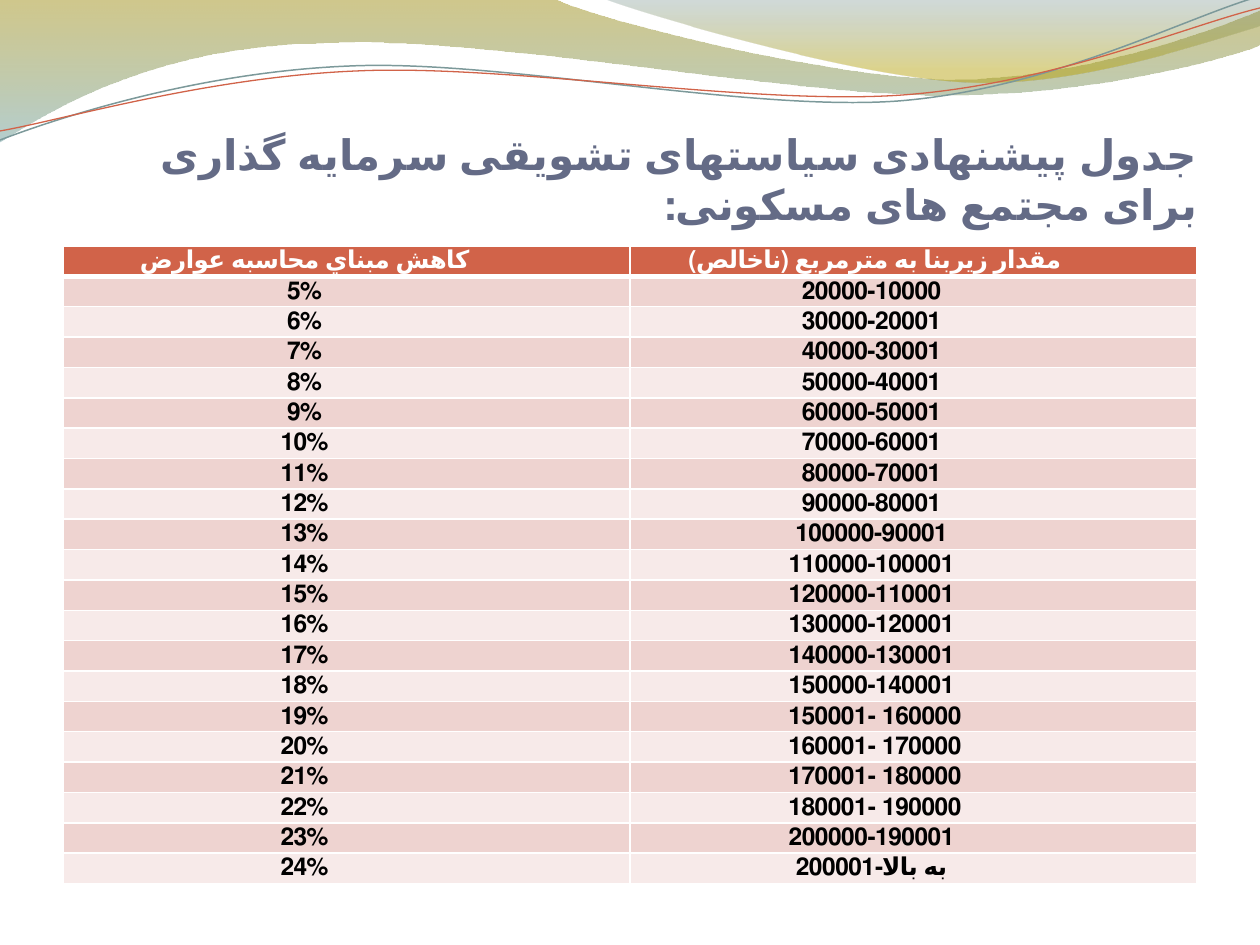
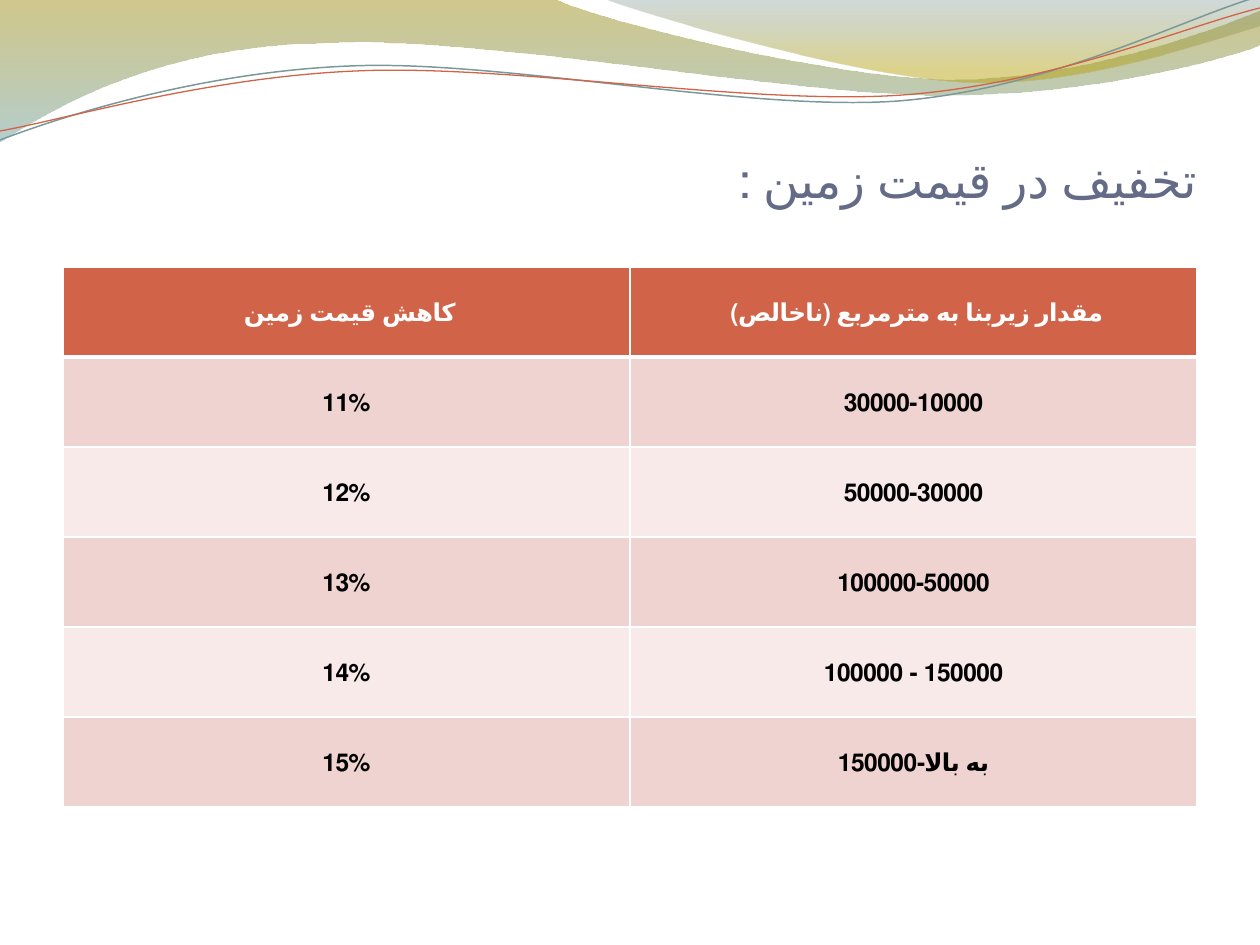
from lxml import etree
from pptx import Presentation, util as u
from pptx.dml.color import RGBColor
from pptx.enum import text
from pptx.oxml.ns import qn

PX = 914400 / 126
SLIDE_W, SLIDE_H = 1260, 945
TITLE_BOX = (63, 97, 1134, 158)
TITLE_FONT, TABLE_FONT = "Calibri", "Times New Roman"
TITLE, HEADER, BODY, WHITE = "646B86", "D16349", "000000", "FFFFFF"
ROW_FILLS = ("EED3D0", "F7EAE9")

# Each outline: a start point, then curves (three points) or lines (one point)
BAND = [(0, 0), [(554, -1)],
        [(600, 21), (837, 79), (955, 79)], [(1075, 79), (1207, 33), (1260, 11)],
        [(1261, 45)], [(1239, 55), (1096, 96), (940, 95)],
        [(784, 95), (481, 35), (324, 43)], [(163, 45), (58, 105), (-1, 142)]]
CREST = [(604, -1), [(641, 14), (859, 78), (969, 82)],
         [(1079, 87), (1211, 40), (1260, 26)], [(1260, 0)]]
GREY_LINE = [(0, 140), [(60, 117), (199, 72), (349, 66)],
             [(498, 59), (747, 112), (898, 101)],
             [(1050, 89), (1182, 19), (1257, -3)]]
RED_LINE = [(0, 131), [(59, 121), (207, 77), (357, 71)],
            [(508, 64), (752, 106), (903, 95)],
            [(1053, 84), (1186, 26), (1260, 8)]]

AREA_HEADING = "مقدار زیربنا به مترمربع (ناخالص) "
DUTY_AREAS = [
    "20000-10000", "30000-20001", "40000-30001", "50000-40001", "60000-50001",
    "70000-60001", "80000-70001", "90000-80001", "100000-90001",
    "110000-100001", "120000-110001", "130000-120001", "140000-130001",
    "150000-140001", "160000 -150001 ", "170000 -160001 ", "180000 -170001 ",
    "190000 -180001 ", "200000-190001", "به بالا-200001"]
LAND_AREAS = ["30000-10000", "50000-30000", "100000-50000",
              "150000 - 100000", "به بالا-150000"]


def px(length):
    return u.Emu(round(length * PX))


def color(value):
    return RGBColor.from_string(value)


def add_outline(page, outline, close):
    """Draw the outline's points, then join each group of three into a curve."""
    start, *segments = outline
    builder = page.shapes.build_freeform(*start, scale=PX)
    for segment in segments:
        builder.add_line_segments(segment, close=close and segment is segments[-1])
    shape = builder.convert_to_shape()
    shape.shadow.inherit = False
    lines = iter(list(shape._element.spPr.iter(qn("a:lnTo"))))
    for segment in segments:
        steps = [next(lines) for _ in segment]
        if len(steps) == 3:
            curve = etree.Element(qn("a:cubicBezTo"))
            steps[0].addprevious(curve)
            for step in steps:
                curve.append(step[0])
                step.getparent().remove(step)
    return shape


def add_wave(page, outline, stops):
    """Filled wave; stops are (position, colour, opacity percent), top to bottom."""
    wave = add_outline(page, outline, True)
    wave.line.fill.background()
    wave.fill.gradient()
    wave.fill.gradient_angle = 270
    for stop, (position, value, _) in zip(wave.fill.gradient_stops, stops):
        stop.position = position
        stop.color.rgb = color(value)
    tints = wave._element.spPr.iter(qn("a:srgbClr"))
    for tint, (_, _, opacity) in zip(tints, stops):
        etree.SubElement(tint, qn("a:alpha"), val=str(opacity * 1000))


def add_header_waves(page):
    add_wave(page, BAND, [(0, "978500", 45), (1, "77A5A6", 55)])
    add_wave(page, CREST, [(0, "648484", 30), (0.8, "B49F00", 45)])
    for outline, value, width in ((GREY_LINE, "7C999A", 0.85), (RED_LINE, HEADER, 0.75)):
        strand = add_outline(page, outline, False)
        strand.fill.background()
        strand.line.color.rgb = color(value)
        strand.line.width = u.Pt(width)


def write(para, words, align, font, size, value, bold):
    """Fill a right-to-left Persian paragraph."""
    span = para.add_run()
    span.text = words
    span._r.get_or_add_rPr().set("lang", "fa-IR")
    para.alignment = align
    para._p.get_or_add_pPr().set("rtl", "1")
    para.font.name = font
    para.font.size = u.Pt(size)
    para.font.bold = bold
    para.font.color.rgb = color(value)


def add_title(page, box, words, size, bold):
    frame = page.shapes.add_textbox(*map(px, box)).text_frame
    frame.word_wrap = True
    frame.vertical_anchor = text.MSO_ANCHOR.MIDDLE
    frame.margin_left = frame.margin_right = frame.margin_bottom = 0
    frame.margin_top = px(6)
    write(frame.paragraphs[0], words, text.PP_ALIGN.RIGHT, TITLE_FONT, size, TITLE, bold)


def add_borders(cell, top, bottom):
    widths = {"a:lnL": 1, "a:lnR": 1, "a:lnT": top, "a:lnB": bottom}
    for place, (tag, width) in enumerate(widths.items()):
        line = etree.Element(qn(tag), w=str(u.Pt(width)))
        fill = etree.SubElement(line, qn("a:solidFill"))
        etree.SubElement(fill, qn("a:srgbClr"), val=WHITE)
        cell._tc.get_or_add_tcPr().insert(place, line)


def add_rate_table(page, box, rows, indent=0, spacing=None):
    """Two columns: the reduction on the left, the floor area on the right."""
    left, top, width, height = box
    table = page.shapes.add_table(len(rows), 2, *map(px, box)).table
    table.horz_banding = False
    for column in table.columns:
        column.width = px(width / 2)
    for r, row in enumerate(rows):
        table.rows[r].height = px(height / len(rows))
        for c, words in enumerate(row):
            cell = table.cell(r, c)
            cell.fill.solid()
            cell.fill.fore_color.rgb = color(ROW_FILLS[(r - 1) % 2] if r else HEADER)
            cell.vertical_anchor = text.MSO_ANCHOR.MIDDLE
            cell.margin_left = cell.margin_right = px(9)
            cell.margin_top = cell.margin_bottom = 0
            add_borders(cell, 3 if r == 1 else 1, 1 if r else 3)
            para = cell.text_frame.paragraphs[0]
            write(para, words, text.PP_ALIGN.CENTER, TABLE_FONT, 14,
                  BODY if r else WHITE, True)
            para.font._rPr.set("spc", "-30")
            if spacing:
                para.line_spacing = spacing
            if indent:
                para.level = 1
                para._p.pPr.set("marL", str(px(indent)))
                para._p.pPr.set("indent", "0")


def rate_rows(heading, first_rate, areas):
    rates = [(f"{rate}%", area) for rate, area in enumerate(areas, first_rate)]
    return [(heading, AREA_HEADING), *rates]


def add_page(deck, title, size, bold):
    page = deck.slides.add_slide(deck.slide_layouts[6])
    add_header_waves(page)
    add_title(page, TITLE_BOX, title, size, bold)
    return page


def main():
    deck = Presentation()
    deck.slide_width, deck.slide_height = px(SLIDE_W), px(SLIDE_H)

    # Reduced duties for residential complexes
    page = add_page(deck, "جدول پیشنهادی سیاستهای تشویقی سرمایه گذاری برای مجتمع های مسکونی:",
                    24, True)
    add_rate_table(page, (63, 246, 1134, 638),
                   rate_rows("كاهش مبناي محاسبه عوارض", 5, DUTY_AREAS), indent=84)

    # Discount on land price
    page = add_page(deck, "تخفیف در قیمت زمین :", 28, False)
    add_rate_table(page, (63, 267, 1134, 540),
                   rate_rows("كاهش قیمت زمین ", 11, LAND_AREAS), spacing=1.15)

    deck.save("out.pptx")


if __name__ == "__main__":
    main()
